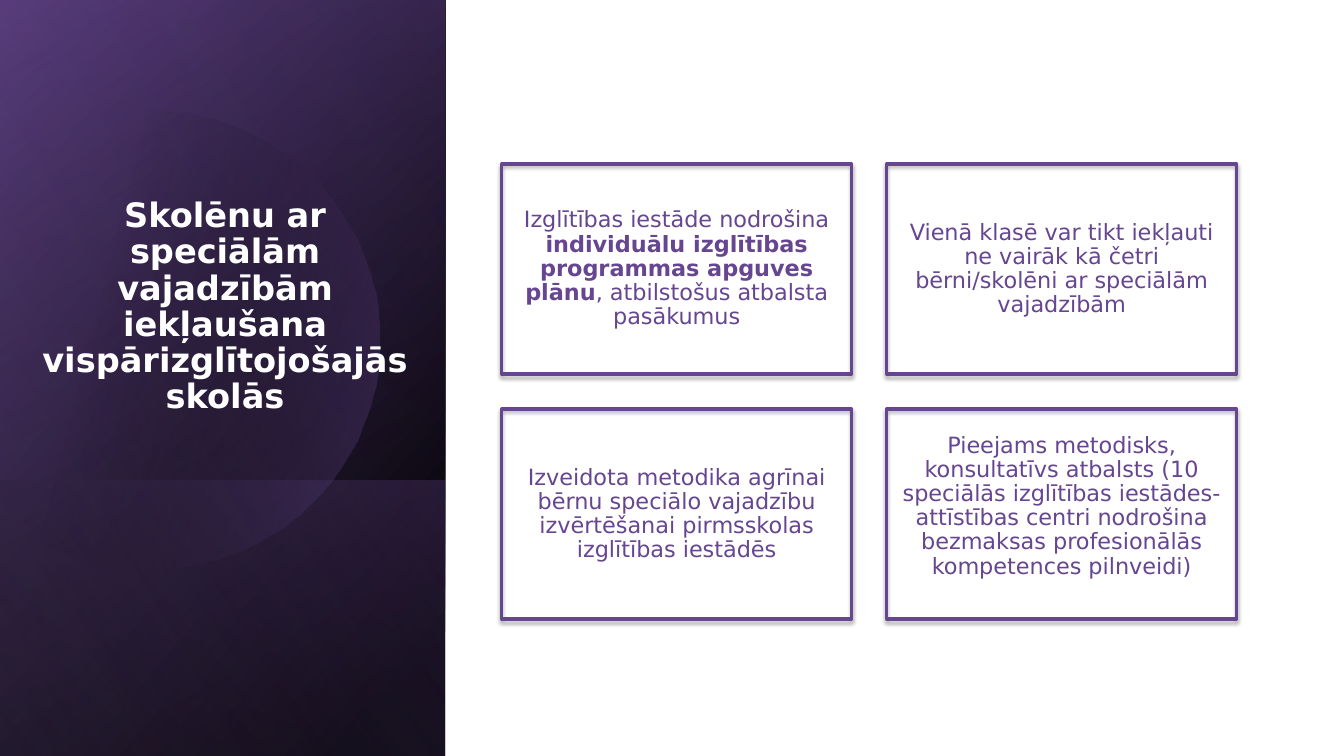
from dataclasses import dataclass
from math import cos, radians, sin

from lxml import etree
from pptx import Presentation
from pptx.dml.color import RGBColor
from pptx.enum.shapes import MSO_SHAPE
from pptx.enum.text import MSO_ANCHOR, PP_ALIGN
from pptx.oxml.ns import qn
from pptx.util import Pt

RECT = MSO_SHAPE.RECTANGLE
MIDDLE = MSO_ANCHOR.MIDDLE
CENTER = PP_ALIGN.CENTER


@dataclass(frozen=True)
class Theme:
    font: str = "DejaVu Sans"
    white: str = "FFFFFF"
    black: str = "000000"
    purple: str = "664690"
    deep: str = "4C346C"
    lilac: str = "A287C5"
    title: int = 24
    body: int = 16


class Board:
    def __init__(self, slide, theme):
        self.slide = slide
        self.theme = theme

    def color(self, parent, value, alpha):
        node = etree.SubElement(parent, qn("a:srgbClr"), val=value)
        etree.SubElement(node, qn("a:alpha"), val=str(alpha * 1000))

    def blend(self, shape, stops, angle):
        """Fill a shape with a gradient of (place, colour, opacity) stops."""
        shape.shadow.inherit = False
        shape.line.fill.background()
        shape.fill.background()
        props = shape._element.spPr
        grad = etree.Element(qn("a:gradFill"), rotWithShape="1")
        items = etree.SubElement(grad, qn("a:gsLst"))
        for place, value, alpha in stops:
            stop = etree.SubElement(items, qn("a:gs"), pos=str(place * 1000))
            self.color(stop, value, alpha)
        etree.SubElement(grad, qn("a:lin"), ang=str(angle * 60000), scaled="0")
        props.replace(props.find(qn("a:noFill")), grad)

    def panel(self, x, y, w, h, stops, angle):
        """Add a mirrored quarter-turned rectangle that covers the given box."""
        left, top = x + (w - h) / 2, y + (h - w) / 2
        shape = self.slide.shapes.add_shape(RECT, Pt(left), Pt(top), Pt(h), Pt(w))
        shape.rotation = 90
        shape._element.spPr.find(qn("a:xfrm")).set("flipH", "1")
        self.blend(shape, stops, angle)

    def disc(self, x, y, radius, sweep, stops, angle):
        """Add a disc cut off on its left side, open beyond +/- sweep degrees."""
        dots = [
            (x + radius * cos(radians(a)), y + radius * sin(radians(a)))
            for a in range(-sweep, sweep + 1, 2)
        ]
        form = self.slide.shapes.build_freeform(*dots[0], scale=Pt(1))
        form.add_line_segments(dots[1:], close=True)
        self.blend(form.convert_to_shape(), stops, angle)

    def frame(self, x, y, w, h):
        shape = self.slide.shapes.add_shape(RECT, Pt(x), Pt(y), Pt(w), Pt(h))
        shape.fill.background()
        shape.line.color.rgb = RGBColor.from_string(self.theme.purple)
        shape.line.width = Pt(2.25)
        shape.shadow.inherit = False
        effects = shape._element.spPr.find(qn("a:effectLst"))
        shadow = etree.SubElement(
            effects, qn("a:outerShdw"), blurRad=str(Pt(3.1)), dist=str(Pt(1.8)),
            dir="5400000", algn="ctr", rotWithShape="0",
        )
        self.color(shadow, self.theme.black, 35)

    def text(self, x, y, w, h, runs, size, color, inset=(5, 5, 5, 5)):
        """Add centred text from (wording, bold) runs."""
        box = self.slide.shapes.add_textbox(Pt(x), Pt(y), Pt(w), Pt(h))
        body = box.text_frame
        body.word_wrap = True
        body.vertical_anchor = MIDDLE
        body.margin_left, body.margin_top, body.margin_right, body.margin_bottom = map(Pt, inset)
        para = body.paragraphs[0]
        para.alignment = CENTER
        para.line_spacing = 0.9
        for words, bold in runs:
            run = para.add_run()
            run.text = words
            run.font.name = self.theme.font
            run.font.size = Pt(size)
            run.font.bold = bold
            run.font.color.rgb = RGBColor.from_string(color)


CARDS = [
    [
        ("Izglītības iestāde nodrošina ", False),
        ("individuālu izglītības programmas apguves plānu", True),
        (", atbilstošus atbalsta pasākumus", False),
    ],
    [("Vienā klasē var tikt iekļauti ne vairāk kā četri bērni/skolēni ar speciālām vajadzībām", False)],
    [("Izveidota metodika agrīnai bērnu speciālo vajadzību izvērtēšanai pirmsskolas izglītības iestādēs", False)],
    [(
        "Pieejams metodisks, konsultatīvs atbalsts (10 speciālās izglītības iestādes-attīstības centri "
        "nodrošina bezmaksas profesionālās kompetences pilnveidi)", False,
    )],
]


def main():
    deck = Presentation()
    deck.slide_width, deck.slide_height = Pt(960), Pt(540)
    look = Theme()
    board = Board(deck.slides.add_slide(deck.slide_layouts[6]), look)

    # Layered side panel
    side = (0, 0, 318, 540)
    board.panel(*side, [(8, look.black, 100), (100, look.deep, 100)], 50)
    board.panel(*side, [(0, look.black, 0), (99, look.purple, 46)], 30)
    board.panel(0, 343, 318, 197, [(2, look.purple, 29), (100, look.black, 30)], 130)
    board.disc(107.3, 243, 164, 130, [(29, look.black, 0), (100, look.purple, 43)], 14)
    board.panel(*side, [(0, look.black, 0), (99, look.lilac, 11)], 120)

    # Title
    title = "Skolēnu ar speciālām vajadzībām iekļaušana vispārizglītojošajās skolās"
    board.text(21, 130, 286.5, 179, [(title, True)], look.title, look.white, (0, 4, 7, 4))

    # Two-by-two cards; the last text sits slightly higher
    for i, runs in enumerate(CARDS):
        row, col = divmod(i, 2)
        spot = (358.4 + col * 275, 117.2 + row * 175, 250, 150)
        board.frame(*spot)
        foot = 16 if i == len(CARDS) - 1 else 5
        board.text(*spot, runs, look.body, look.purple, (5, 5, 5, foot))

    deck.save("out.pptx")


if __name__ == "__main__":
    main()
